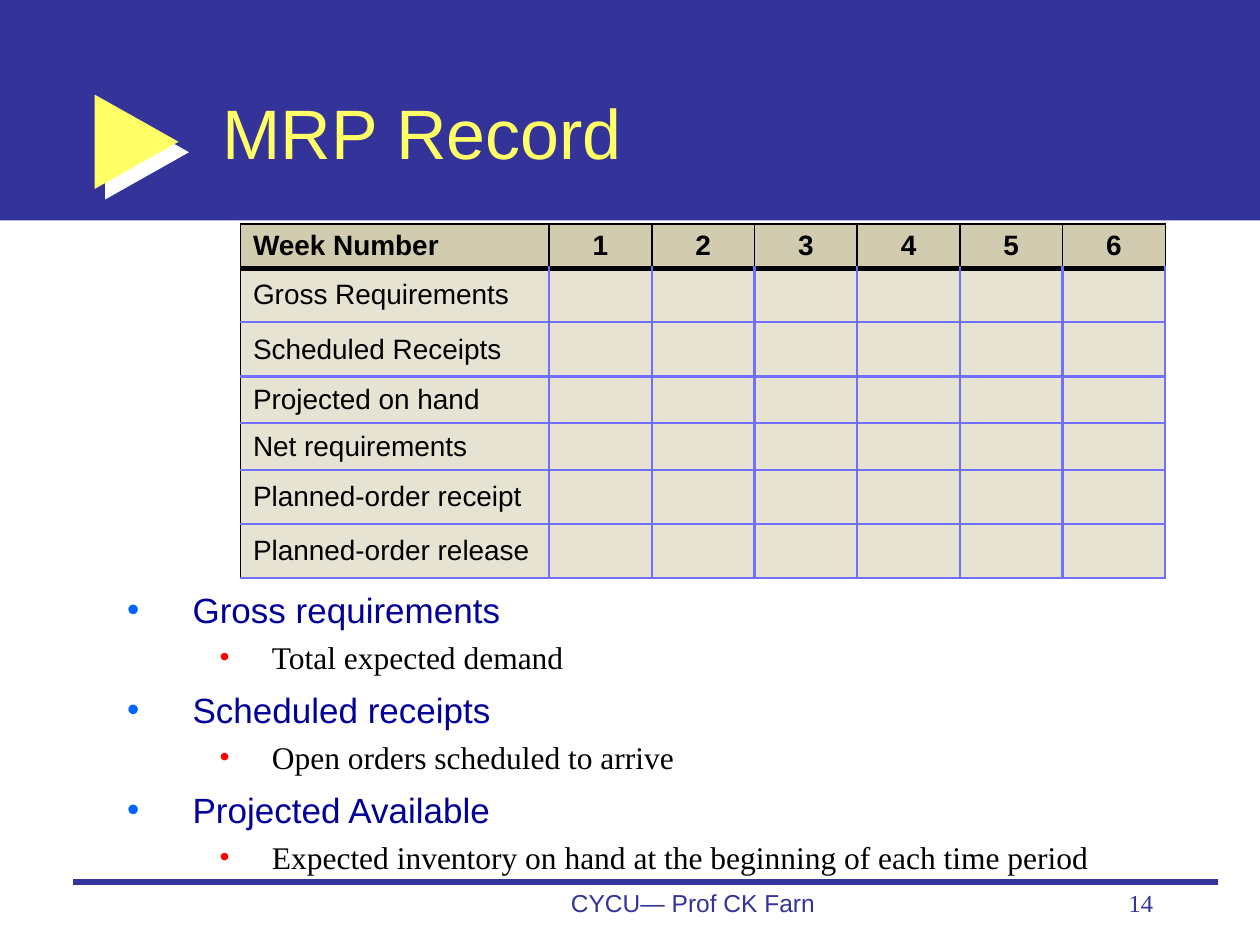
from dataclasses import dataclass

from lxml import etree
from pptx import Presentation
from pptx import util as u
from pptx.dml.color import RGBColor
from pptx.enum import shapes, text
from pptx.oxml import ns

COLUMNS, ROWS = 120, 90  # slide grid: twelfths of an inch


@dataclass(frozen=True)
class Theme:
    band: str = "333399"
    accent: str = "FFFF66"
    white: str = "FFFFFF"
    black: str = "000000"
    heading: str = "000099"
    heading_bullet: str = "0066FF"
    detail_bullet: str = "FF0000"
    header_fill: str = "D1CBAF"
    cell_fill: str = "E6E3D2"
    grid_line: str = "7070FF"
    sans: str = "Arial"
    serif: str = "Times New Roman"
    title_size: int = 40
    heading_size: int = 20
    detail_size: int = 18
    table_size: int = 16
    footer_size: int = 14


@dataclass(frozen=True)
class Area:
    """A rectangle in grid columns and rows."""
    left: float
    top: float
    width: float
    height: float


@dataclass(frozen=True)
class Style:
    name: str
    size: float
    color: str
    bold: bool = False


@dataclass(frozen=True)
class Level:
    style: Style
    bullet: str
    margin: float
    hanging: float
    before: float


@dataclass(frozen=True)
class Topic:
    heading: str
    detail: str


@dataclass(frozen=True)
class Footer:
    words: str
    area: Area
    style: Style
    align: text.PP_ALIGN


THEME = Theme()
HEADING = Level(Style(THEME.sans, THEME.heading_size, THEME.heading),
                THEME.heading_bullet, 0.52, 0.52, 7)
DETAIL = Level(Style(THEME.serif, THEME.detail_size, THEME.black),
               THEME.detail_bullet, 1.15, 0.42, 4.5)
TOPICS = [
    Topic("Gross requirements", "Total expected demand"),
    Topic("Scheduled receipts", "Open orders scheduled to arrive"),
    Topic("Projected Available",
          "Expected inventory on hand at the beginning of each time period"),
]
LOW, HIGH = 4.2, 5.15
WEEKS = 6
RECORD = [("Week Number", LOW), ("Gross Requirements", HIGH),
          ("Scheduled Receipts", HIGH), ("Projected on hand", LOW),
          ("Net requirements", LOW), ("Planned-order receipt", HIGH),
          ("Planned-order release", HIGH)]
RECORD_AREA = Area(22.9, 21.35, 88.1, sum(height for _, height in RECORD))
LABEL_WIDTH = 29.4
FOOTERS = [
    Footer("CYCU— Prof CK Farn", Area(47, 84, 38, 6),
           Style(THEME.sans, THEME.footer_size, THEME.band), text.PP_ALIGN.CENTER),
    Footer("14", Area(86, 84, 25, 6),
           Style(THEME.serif, THEME.footer_size, THEME.band), text.PP_ALIGN.RIGHT),
]


def grid(units: float) -> u.Length:
    return u.Inches(units / 12)


def bounds(area: Area) -> list:
    return [grid(n) for n in (area.left, area.top, area.width, area.height)]


def place(shape, area: Area) -> None:
    for name, length in zip(("left", "top", "width", "height"), bounds(area)):
        setattr(shape, name, length)


def add_xml(parent, tag: str, **values):
    return etree.SubElement(parent, ns.qn(tag), {k: str(v) for k, v in values.items()})


def write(para, words: str, style: Style) -> None:
    span = para.add_run()
    span.text = words
    formats = {"name": style.name, "size": u.Pt(style.size), "bold": style.bold}
    for name, value in formats.items():
        setattr(span.font, name, value)
    span.font.color.rgb = RGBColor.from_string(style.color)


def add_solid(page, kind, area: Area, color: str):
    shape = page.shapes.add_shape(kind, *bounds(area))
    shape.shadow.inherit = False
    shape.fill.solid()
    shape.fill.fore_color.rgb = RGBColor.from_string(color)
    shape.line.fill.background()
    return shape


def draw_frame(page) -> None:
    """Title band, arrow with its hard shadow, and footer rule."""
    add_solid(page, shapes.MSO_SHAPE.RECTANGLE, Area(0, 0, COLUMNS, 21), THEME.band)
    arrow = add_solid(page, shapes.MSO_SHAPE.RIGHT_ARROW, Area(9, 9, 8, 9), THEME.accent)
    arrow.adjustments[0], arrow.adjustments[1] = 0.38, 1
    effects = arrow._element.spPr.find(ns.qn("a:effectLst"))
    shadow = add_xml(effects, "a:outerShdw", blurRad=0, dist=u.Pt(8.5),
                     dir=45 * 60000, algn="ctr", rotWithShape=0)
    add_xml(shadow, "a:srgbClr", val=THEME.white)
    rule = page.shapes.add_connector(shapes.MSO_CONNECTOR.STRAIGHT,
                                     grid(7), grid(84), grid(116), grid(84))
    rule.line.color.rgb = RGBColor.from_string(THEME.band)
    rule.line.width = u.Pt(3)
    add_xml(rule._element.spPr, "a:effectLst")


def fill_title(page) -> None:
    title = page.shapes.title
    page.shapes._spTree.append(title._element)  # in front of the band
    place(title, Area(20, 5, 91, 15))
    frame = title.text_frame
    frame.auto_size = text.MSO_AUTO_SIZE.NONE
    frame.vertical_anchor = text.MSO_ANCHOR.MIDDLE
    para = frame.paragraphs[0]
    para.alignment = text.PP_ALIGN.LEFT
    write(para, "MRP Record", Style(THEME.sans, THEME.title_size, THEME.accent))


def fill_topics(page) -> None:
    body = page.placeholders[1]
    page.shapes._spTree.append(body._element)
    place(body, Area(10.9, 55.45, 96.4, 30.35))
    frame = body.text_frame
    frame.auto_size = text.MSO_AUTO_SIZE.NONE
    lines = [line for topic in TOPICS
             for line in ((topic.heading, HEADING), (topic.detail, DETAIL))]
    for number, (words, level) in enumerate(lines):
        para = frame.add_paragraph() if number else frame.paragraphs[0]
        para.level = 1 if level is DETAIL else 0
        para.space_before = u.Pt(level.before if number else 0)
        props = para._p.get_or_add_pPr()
        props.set("marL", str(u.Inches(level.margin)))
        props.set("indent", str(-u.Inches(level.hanging)))
        add_xml(add_xml(props, "a:buClr"), "a:srgbClr", val=level.bullet)
        add_xml(props, "a:buFont", typeface=level.style.name)
        add_xml(props, "a:buChar", char="•")
        write(para, words, level.style)


def set_borders(cell, row: int, column: int) -> None:
    thin, thick, inner = (THEME.black, 1), (THEME.black, 3), (THEME.grid_line, 1.5)
    if row == 0:
        sides = {"L": thin, "R": thin, "T": thin, "B": thick}
        if column == WEEKS:
            sides["R"] = (THEME.black, 0.25)
    else:
        sides = {"L": inner if column else thin, "R": inner,
                 "T": thick if row == 1 else inner, "B": inner}
    props = cell._tc.get_or_add_tcPr()
    for index, (side, (color, width)) in enumerate(sides.items()):
        line = etree.Element(ns.qn(f"a:ln{side}"), w=str(u.Pt(width)))
        add_xml(add_xml(line, "a:solidFill"), "a:srgbClr", val=color)
        props.insert(index, line)


def draw_record(page) -> None:
    table = page.shapes.add_table(len(RECORD), WEEKS + 1, *bounds(RECORD_AREA)).table
    table.first_row = table.horz_banding = False
    week_width = (RECORD_AREA.width - LABEL_WIDTH) / WEEKS
    for column, track in enumerate(table.columns):
        track.width = grid(week_width if column else LABEL_WIDTH)
    for row, (label, height) in enumerate(RECORD):
        table.rows[row].height = grid(height)
        style = Style(THEME.sans, THEME.table_size, THEME.black, row == 0)
        for column, cell in enumerate(table.rows[row].cells):
            cell.fill.solid()
            cell.fill.fore_color.rgb = RGBColor.from_string(
                THEME.cell_fill if row else THEME.header_fill)
            cell.vertical_anchor = text.MSO_ANCHOR.MIDDLE
            set_borders(cell, row, column)
            para = cell.text_frame.paragraphs[0]
            if column and row:
                add_xml(para._p, "a:endParaRPr", sz=THEME.table_size * 100)
                continue
            para.alignment = text.PP_ALIGN.CENTER if column else text.PP_ALIGN.LEFT
            write(para, str(column) if column else label, style)


def draw_footer(page, footer: Footer) -> None:
    box = page.shapes.add_textbox(*bounds(footer.area))
    box.text_frame.word_wrap = True
    para = box.text_frame.paragraphs[0]
    para.alignment = footer.align
    write(para, footer.words, footer.style)


def main() -> None:
    deck = Presentation()
    deck.slide_width, deck.slide_height = grid(COLUMNS), grid(ROWS)
    page = deck.slides.add_slide(deck.slide_layouts[1])
    draw_frame(page)
    fill_title(page)
    fill_topics(page)
    draw_record(page)
    for footer in FOOTERS:
        draw_footer(page, footer)
    deck.save("out.pptx")


if __name__ == "__main__":
    main()
